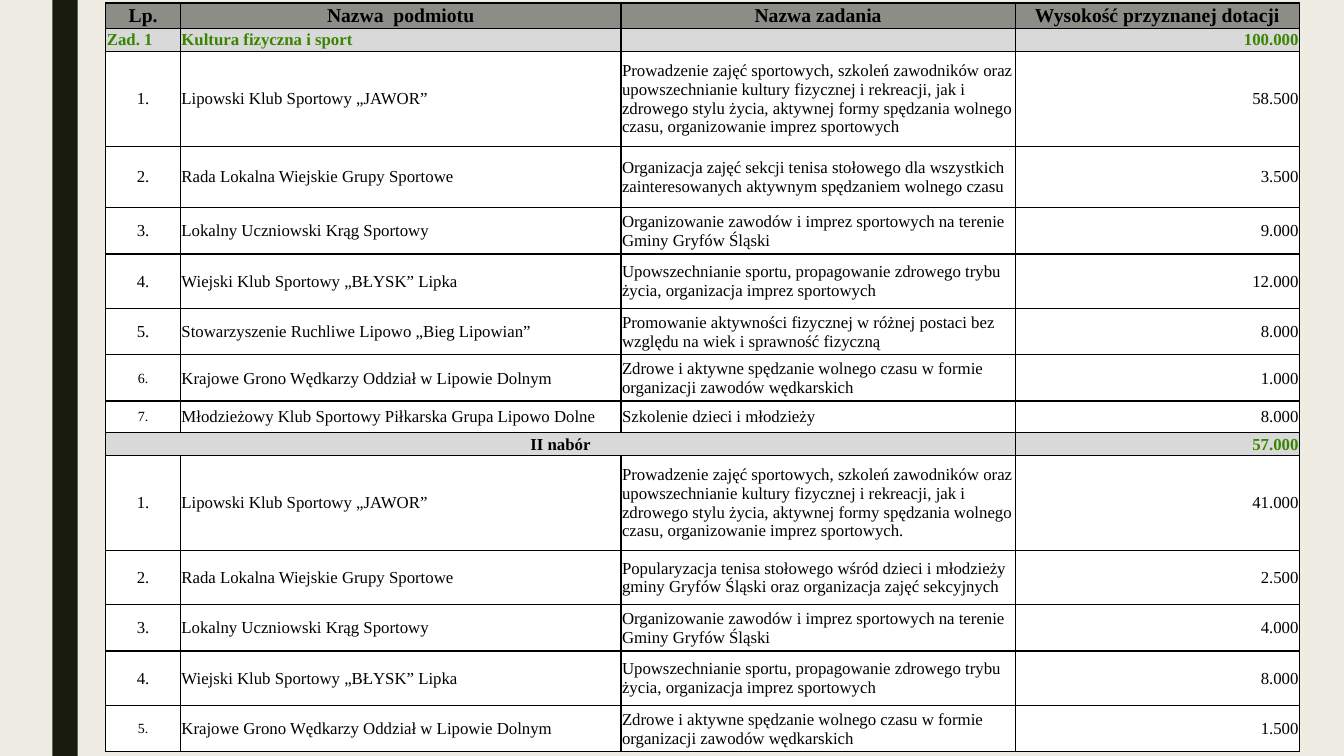
"""Build a slide with the table of sports grants awarded in two rounds."""
from dataclasses import dataclass

from lxml import etree
from pptx import Presentation, util as u
from pptx.dml.color import RGBColor
from pptx.enum import shapes, text
from pptx.oxml.ns import qn

KLUB = "Lipowski Klub Sportowy „JAWOR”"
RADA = "Rada Lokalna Wiejskie Grupy Sportowe"
SZKOLNY = "Lokalny Uczniowski Krąg Sportowy"
WIEJSKI = "Wiejski Klub Sportowy „BŁYSK” Lipka"
WEDKARZE = "Krajowe Grono Wędkarzy Oddział w Lipowie Dolnym"
ZAJECIA = ("Prowadzenie zajęć sportowych, szkoleń zawodników oraz upowszechnianie kultury "
           "fizycznej i rekreacji, jak i zdrowego stylu życia, aktywnej formy spędzania "
           "wolnego czasu, organizowanie imprez sportowych")
ZAWODY = "Organizowanie zawodów i imprez sportowych na terenie Gminy Gryfów Śląski"
SPORT = "Upowszechnianie sportu, propagowanie zdrowego trybu życia, organizacja imprez sportowych"
WEDKARSTWO = "Zdrowe i aktywne spędzanie wolnego czasu w formie organizacji zawodów wędkarskich"

ROWS = [
    (0.25, "header", ("Lp.", "Nazwa  podmiotu", "Nazwa zadania", "Wysokość przyznanej dotacji")),
    (0.23, "task", ("Zad. 1", "Kultura fizyczna i sport", "", "100.000")),
    (0.94, "entry", ("1.", KLUB, ZAJECIA, "58.500")),
    (0.61, "entry", ("2.", RADA, "Organizacja zajęć sekcji tenisa stołowego dla wszystkich "
                     "zainteresowanych aktywnym spędzaniem wolnego czasu", "3.500")),
    (0.46, "entry", ("3.", SZKOLNY, ZAWODY, "9.000")),
    (0.54, "entry", ("4.", WIEJSKI, SPORT, "12.000")),
    (0.46, "entry", ("5.", "Stowarzyszenie Ruchliwe Lipowo „Bieg Lipowian”",
                     "Promowanie aktywności fizycznej w różnej postaci bez względu na wiek "
                     "i sprawność fizyczną", "8.000")),
    (0.46, "minor", ("6.", WEDKARZE, WEDKARSTWO, "1.000")),
    (0.31, "minor", ("7.", "Młodzieżowy Klub Sportowy Piłkarska Grupa Lipowo Dolne",
                     "Szkolenie dzieci i młodzieży", "8.000")),
    (0.23, "round", ("II nabór", "", "", "57.000")),
    (0.94, "entry", ("1.", KLUB, ZAJECIA + ".", "41.000")),
    (0.54, "entry", ("2.", RADA, "Popularyzacja tenisa stołowego wśród dzieci i młodzieży gminy "
                     "Gryfów Śląski oraz organizacja zajęć sekcyjnych", "2.500")),
    (0.46, "entry", ("3.", SZKOLNY, ZAWODY, "4.000")),
    (0.54, "entry", ("4.", WIEJSKI, SPORT, "8.000")),
    (0.46, "minor", ("5.", WEDKARZE, WEDKARSTWO, "1.500")),
]
COLUMNS = (0.74, 4.37, 3.91, 2.82)
SLIDE = (13.33, 7.5)
BAND = (0.52, 0, 0.25, SLIDE[1])
TABLE_ORIGIN = (1.05, 0.03)


@dataclass(frozen=True)
class Theme:
    font: str = "Times New Roman"
    page: str = "EFEDE3"
    band: str = "191B0E"
    ink: str = "000000"
    accent: str = "388600"
    header: str = "8C8D86"
    group: str = "D9D9D9"
    entry: str = "FFFFFF"
    title_size: int = 14
    body_size: int = 12
    small_size: int = 10
    border: int = 1


THEME = Theme()
LEFT, CENTER, RIGHT = text.PP_ALIGN.LEFT, text.PP_ALIGN.CENTER, text.PP_ALIGN.RIGHT
ALIGNS = {"header": (CENTER,) * 4, "task": (LEFT, LEFT, LEFT, RIGHT)}
ENTRY_ALIGNS = (CENTER, LEFT, LEFT, RIGHT)
FILLS = {"header": THEME.header, "task": THEME.group, "round": THEME.group}
CELL_FORMAT = {
    "margin_left": u.Inches(0.01), "margin_right": u.Inches(0.01),
    "margin_top": u.Inches(0.01), "margin_bottom": 0,
    "vertical_anchor": text.MSO_ANCHOR.MIDDLE,
}


def paint(fill, color):
    fill.solid()
    fill.fore_color.rgb = RGBColor.from_string(color)


def add_borders(cell):
    properties = cell._tc.get_or_add_tcPr()
    for index, side in enumerate(("lnL", "lnR", "lnT", "lnB")):
        line = etree.Element(qn(f"a:{side}"), w=str(u.Pt(THEME.border)))
        solid = etree.SubElement(line, qn("a:solidFill"))
        etree.SubElement(solid, qn("a:srgbClr"), val=THEME.ink)
        properties.insert(index, line)


def text_format(kind, column):
    size = THEME.title_size if kind == "header" else THEME.body_size
    if kind == "minor" and column == 0:
        size = THEME.small_size
    green = kind == "task" or (kind == "round" and column == 3)
    return size, THEME.accent if green else THEME.ink


def fill_cell(cell, kind, column, words):
    for name, value in CELL_FORMAT.items():
        setattr(cell, name, value)
    paint(cell.fill, FILLS.get(kind, THEME.entry))
    add_borders(cell)
    size, color = text_format(kind, column)
    para = cell.text_frame.paragraphs[0]
    para.alignment = ALIGNS.get(kind, ENTRY_ALIGNS)[column]
    if not words:
        ending = etree.SubElement(para._p, qn("a:endParaRPr"))
        ending.set("sz", str(size * 100))
        return
    span = para.add_run()
    span.text = words
    font = {"name": THEME.font, "size": u.Pt(size), "bold": kind in FILLS}
    for name, value in font.items():
        setattr(span.font, name, value)
    span.font.color.rgb = RGBColor.from_string(color)


def add_grants(page):
    heights = [height for height, _, _ in ROWS]
    area = (*TABLE_ORIGIN, sum(COLUMNS), sum(heights))
    grants = page.shapes.add_table(len(ROWS), len(COLUMNS), *map(u.Inches, area)).table
    grants.first_row = grants.horz_banding = False
    for column, width in zip(grants.columns, COLUMNS):
        column.width = u.Inches(width)
    for row, (height, kind, entries) in enumerate(ROWS):
        grants.rows[row].height = u.Inches(height)
        for column, words in enumerate(entries):
            fill_cell(grants.cell(row, column), kind, column, words)
        if kind == "round":
            grants.cell(row, 0).merge(grants.cell(row, 2))


def main():
    deck = Presentation()
    deck.slide_width, deck.slide_height = map(u.Inches, SLIDE)
    page = deck.slides.add_slide(deck.slide_layouts[6])
    paint(page.background.fill, THEME.page)
    band = page.shapes.add_shape(shapes.MSO_SHAPE.RECTANGLE, *map(u.Inches, BAND))
    band.shadow.inherit = False
    paint(band.fill, THEME.band)
    band.line.fill.background()
    add_grants(page)
    deck.save("out.pptx")


if __name__ == "__main__":
    main()
